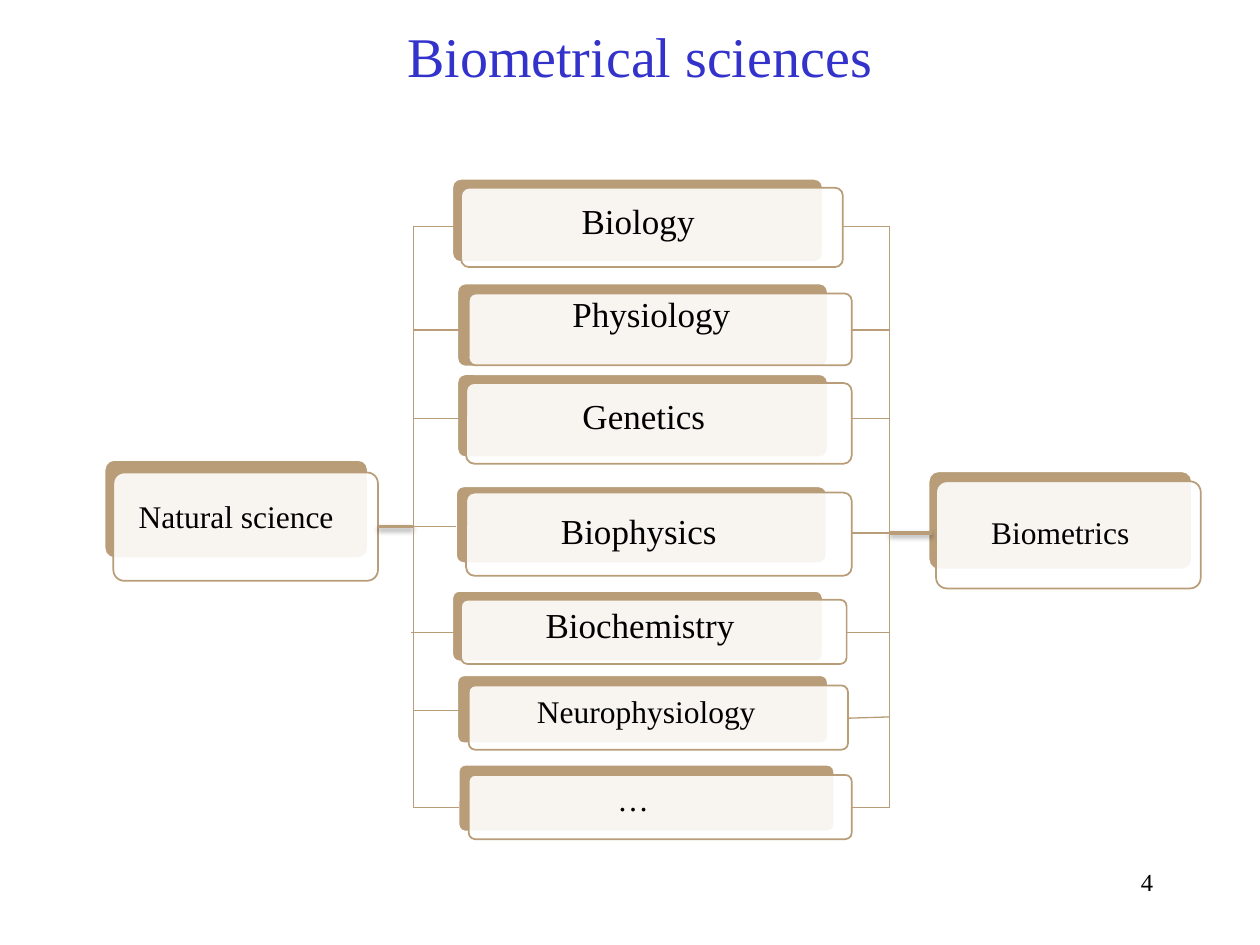
from typing import NamedTuple

from lxml import etree
from pptx import Presentation
from pptx import util as u
from pptx.dml.color import RGBColor
from pptx.enum import shapes, text
from pptx.oxml import ns

PX = 9144
TAN = RGBColor(0xB8, 0x9D, 0x78)
WHITE = RGBColor(0xFF, 0xFF, 0xFF)
BLACK = RGBColor(0, 0, 0)
BLUE = RGBColor(0x33, 0x33, 0xCC)
FONT = "Times New Roman"
LEFT, RIGHT = 328, 706
TOP, BASE = 179, 641
STUB = 36


class Box(NamedTuple):
    x: int
    y: int
    w: int
    h: int

    def emu(self) -> list[int]:
        return [n * PX for n in self]


class Card(NamedTuple):
    name: str
    size: int
    back: Box
    front: Box
    label: Box


class Field(NamedTuple):
    card: Card
    start: int
    left: int
    right: int
    end: int


NATURE = Card("Natural science", 18, Box(83, 365, 209, 78),
              Box(90, 375, 210, 86), Box(88, 371, 199, 81))
METRICS = Card("Biometrics", 18, Box(737, 374, 209, 78),
               Box(743, 382, 210, 85), Box(742, 384, 199, 80))
FIELDS = [
    Field(Card("Biology", 20, Box(359, 142, 294, 66),
               Box(366, 149, 303, 63), Box(363, 147, 287, 60)),
          LEFT, 180, 180, 180),
    Field(Card("Physiology", 20, Box(363, 225, 294, 66),
               Box(372, 233, 304, 57), Box(372, 224, 290, 54)),
          LEFT, 262, 262, 262),
    Field(Card("Genetics", 20, Box(363, 297, 294, 66),
               Box(370, 304, 306, 64), Box(366, 302, 290, 60)),
          LEFT, 332, 332, 332),
    Field(Card("Biophysics", 20, Box(362, 386, 294, 61),
               Box(370, 391, 306, 66), Box(361, 398, 292, 50)),
          LEFT - 2, 418, 423, 423),
    Field(Card("Biochemistry", 20, Box(359, 469, 294, 56),
               Box(366, 476, 306, 51), Box(363, 474, 290, 48)),
          LEFT - 2, 502, 502, 502),
    Field(Card("Neurophysiology", 18, Box(363, 536, 294, 54),
               Box(372, 544, 301, 51), Box(368, 542, 290, 48)),
          LEFT, 564, 570, 569),
    Field(Card("…", 18, Box(364, 607, 298, 53),
               Box(372, 615, 304, 51), Box(355, 612, 295, 48)),
          LEFT, 641, 641, 641),
]


def write(slide, words: str, box: Box, size: int, color: RGBColor = BLACK,
          align=text.PP_ALIGN.CENTER, anchor=text.MSO_ANCHOR.MIDDLE,
          side: int = 10, edge: int = 5, space: float = 1.0) -> None:
    frame = slide.shapes.add_textbox(*box.emu()).text_frame
    frame.word_wrap = True
    frame.vertical_anchor = anchor
    frame.margin_left = frame.margin_right = side * PX
    frame.margin_top = frame.margin_bottom = edge * PX
    para = frame.paragraphs[0]
    para.text = words
    para.alignment = align
    para.line_spacing = space
    para.font.name = FONT
    para.font.size = u.Pt(size)
    para.font.color.rgb = color


def plate(slide, box: Box, fill: RGBColor, line: RGBColor):
    shape = slide.shapes.add_shape(
        shapes.MSO_SHAPE.ROUNDED_RECTANGLE, *box.emu())
    shape.adjustments[0] = 0.1
    shape.shadow.inherit = False
    shape.fill.solid()
    shape.fill.fore_color.rgb = fill
    shape.line.color.rgb = line
    shape.line.width = u.Pt(1)
    return shape


def face(slide, card: Card) -> None:
    shape = plate(slide, card.front, WHITE, TAN)
    tint = shape.fill._xPr.find(".//" + ns.qn("a:srgbClr"))
    etree.SubElement(tint, ns.qn("a:alpha"), val="90000")
    write(slide, card.name, card.label, card.size,
          side=12, edge=12, space=0.9)


def link(slide, x: int, y: int, to_x: int, to_y: int,
         bold: bool = False) -> None:
    line = slide.shapes.add_connector(
        shapes.MSO_CONNECTOR.STRAIGHT, x * PX, y * PX, to_x * PX, to_y * PX)
    line.line.color.rgb = TAN
    line.line.width = u.Pt(2 if bold else 0.75)
    props = line._element.spPr
    effect = etree.SubElement(props, ns.qn("a:effectLst"))
    if bold:
        shade = etree.SubElement(
            effect, ns.qn("a:outerShdw"), blurRad=str(u.Pt(3.1)),
            dist=str(u.Pt(1.6)), dir="5400000", rotWithShape="0")
        tint = etree.SubElement(shade, ns.qn("a:srgbClr"), val=str(BLACK))
        etree.SubElement(tint, ns.qn("a:alpha"), val="38000")


def main() -> None:
    deck = Presentation()
    deck.slide_width, deck.slide_height = 1000 * PX, 750 * PX
    slide = deck.slides.add_slide(deck.slide_layouts[6])

    write(slide, "Biometrical sciences", Box(33, -19, 950, 125), 32, BLUE)
    write(slide, "4", Box(717, 683, 208, 50), 14,
          align=text.PP_ALIGN.RIGHT, anchor=text.MSO_ANCHOR.TOP)

    cards = [field.card for field in FIELDS] + [NATURE, METRICS]
    for card in cards:
        plate(slide, card.back, TAN, WHITE)
    for card in cards:
        face(slide, card)

    link(slide, 300, 418, LEFT, 418, bold=True)
    link(slide, RIGHT, 423, 740, 423, bold=True)
    for x in (LEFT, RIGHT):
        link(slide, x, TOP, x, BASE)
    for card, start, left, right, end in FIELDS:
        link(slide, start, left, start + STUB, left)
        link(slide, card.front.x + card.front.w, right, RIGHT, end)

    deck.save("out.pptx")


if __name__ == "__main__":
    main()
